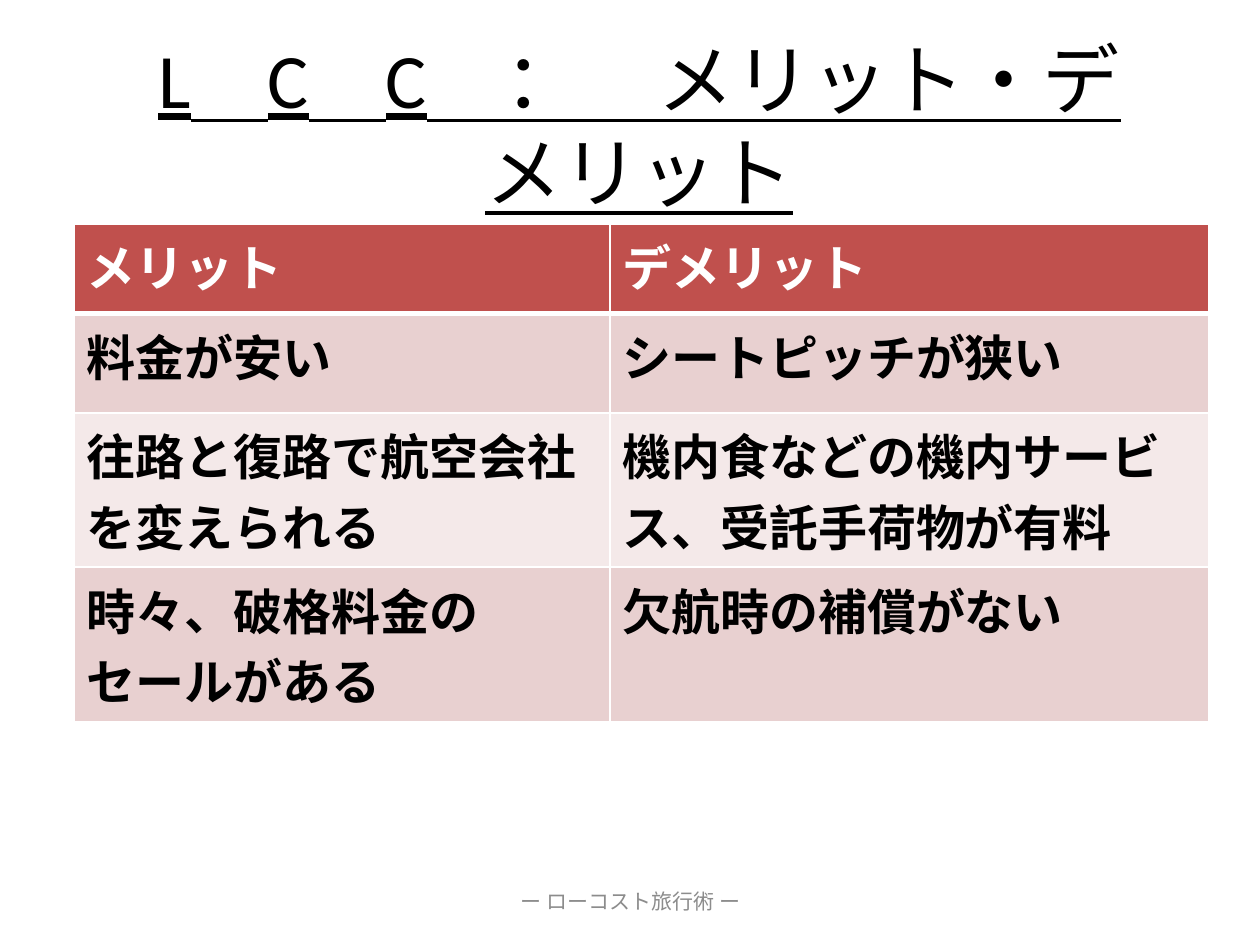
from lxml import etree
from pptx import Presentation
from pptx.dml import color
from pptx.enum import text
from pptx.oxml import ns
from pptx.util import Inches, Pt

W, H = 10, 7.5
FONT = "Calibri"
COLORS = {
    "ink": "000000",
    "paper": "FFFFFF",
    "header": "C0504D",
    "odd": "E8D0D0",
    "even": "F4E9E9",
    "footer": "8C8C8C",
}
ROWS = [
    ("メリット", "デメリット"),
    ("料金が安い", "シートピッチが狭い"),
    ("往路と復路で航空会社を変えられる", "機内食などの機内サービス、受託手荷物が有料"),
    ("時々、破格料金の\nセールがある", "欠航時の補償がない"),
]
COL_WIDTHS = (4.25, 4.75)
ROW_HEIGHTS = (0.71, 0.79, 0.79, 1.2)


def share(x, y, w, h):
    return [Inches(v) for v in (x * W, y * H, w * W, h * H)]


def rgb(name):
    return color.RGBColor.from_string(COLORS[name])


def write(tf, words, ink, align=None, **formats):
    tf.text = words
    for p in tf.paragraphs:
        p.alignment = align
        for r in p.runs:
            r.font.color.rgb = rgb(ink)
            for key, value in {"name": FONT, **formats}.items():
                setattr(r.font, key, value)


def set_frame(tf):
    formats = {
        "word_wrap": True,
        "auto_size": text.MSO_AUTO_SIZE.NONE,
        "vertical_anchor": text.MSO_ANCHOR.MIDDLE,
    }
    for key, value in formats.items():
        setattr(tf, key, value)


def add_title(s, box):
    sp = s.shapes.title
    for key, value in zip(("left", "top", "width", "height"), box):
        setattr(sp, key, value)
    set_frame(sp.text_frame)
    write(sp.text_frame, "L　C　C　：　メリット・デメリット", "ink",
          text.PP_ALIGN.CENTER, size=Pt(44), underline=True)


def set_borders(cell, widths):
    tc_pr = cell._tc.get_or_add_tcPr()
    for side, width in widths.items():
        ln = etree.SubElement(tc_pr, ns.qn(f"a:ln{side}"), w=str(Pt(width)))
        fill = etree.SubElement(ln, ns.qn("a:solidFill"))
        etree.SubElement(fill, ns.qn("a:srgbClr"), val=COLORS["paper"])


def add_comparison(s, box):
    table = s.shapes.add_table(len(ROWS), len(COL_WIDTHS), *box).table
    for col, width in zip(table.columns, COL_WIDTHS):
        col.width = Inches(width)
    for row, height in zip(table.rows, ROW_HEIGHTS):
        row.height = Inches(height)
    for i, words in enumerate(ROWS):
        fill = "header" if i == 0 else ("even", "odd")[i % 2]
        ink = "paper" if i == 0 else "ink"
        widths = {"L": 1, "R": 1, "T": 3 if i == 1 else 1, "B": 3 if i == 0 else 1}
        for j, entry in enumerate(words):
            cell = table.cell(i, j)
            set_borders(cell, widths)
            cell.fill.solid()
            cell.fill.fore_color.rgb = rgb(fill)
            write(cell.text_frame, entry, ink, size=Pt(28), bold=True)


def add_footer(s, box):
    tf = s.shapes.add_textbox(*box).text_frame
    set_frame(tf)
    write(tf, "ー ローコスト旅行術 ー", "footer", text.PP_ALIGN.CENTER, size=Pt(12))


def main():
    prs = Presentation()
    prs.slide_width, prs.slide_height = Inches(W), Inches(H)
    s = prs.slides.add_slide(prs.slide_layouts[5])
    add_title(s, share(0.114, 0.059, 0.787, 0.145))
    add_comparison(s, share(0.059, 0.237, 0.9, 0.465))
    add_footer(s, share(0.342, 0.927, 0.317, 0.053))
    prs.save("out.pptx")


if __name__ == "__main__":
    main()
